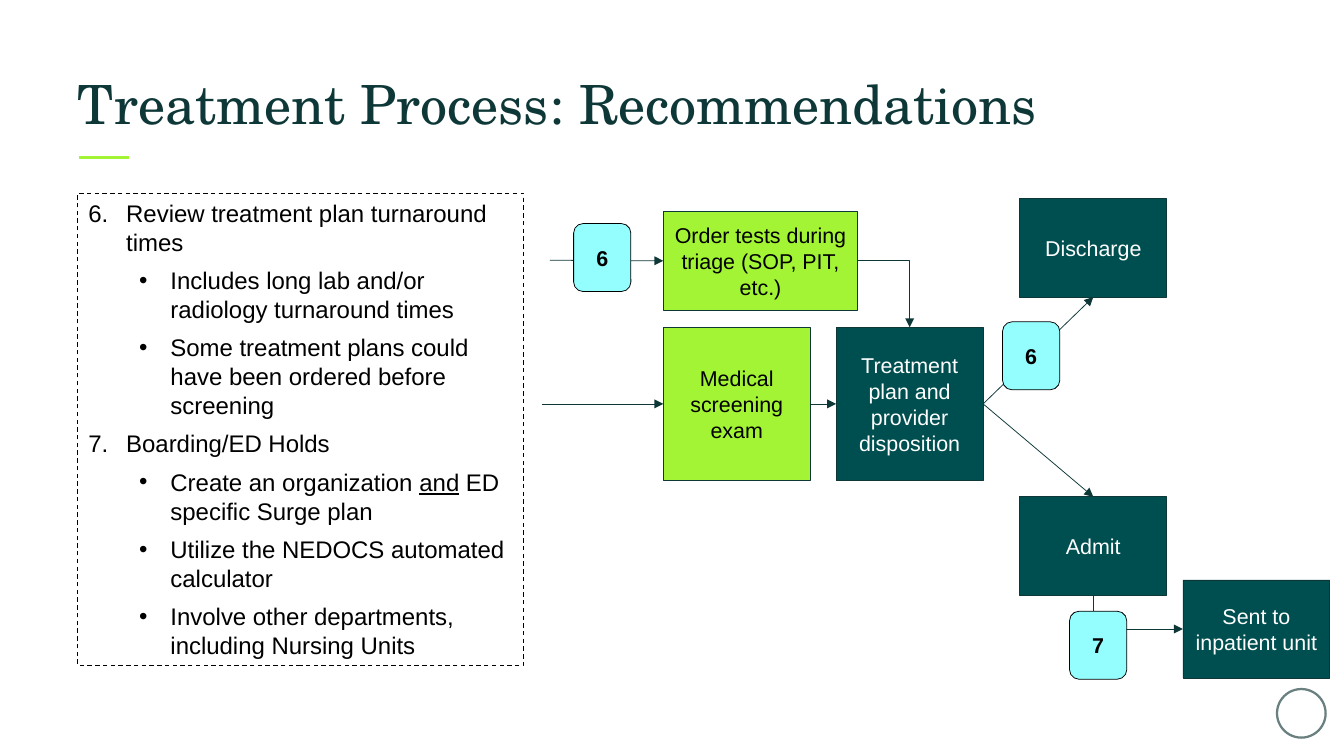
from lxml.etree import SubElement
from pptx import Presentation
from pptx.dml.color import RGBColor
from pptx.enum.dml import MSO_LINE
from pptx.enum.shapes import MSO_CONNECTOR as CONN, MSO_SHAPE as SHAPE
from pptx.enum.text import MSO_ANCHOR as ANCHOR, PP_ALIGN as ALIGN
from pptx.oxml.ns import qn
from pptx.util import Inches, Pt

INK, TEAL, LIME, CYAN = "0E3837", "004F50", "A2F434", "94FEFF"
BLACK, WHITE = "000000", "FFFFFF"
TOP, LEFT, BOTTOM, RIGHT = range(4)  # connection sites of a rectangle


def paint(fill, color):
    fill.solid()
    fill.fore_color.rgb = RGBColor.from_string(color)


def write(p, text, size=14.3, color=BLACK, font="Arial", **style):
    r = p.add_run()
    r.text = text
    r.font.size, r.font.name = Pt(size), font
    paint(r.font.fill, color)
    for name, value in style.items():
        setattr(r.font, name, value)


prs = Presentation()
prs.slide_width, prs.slide_height = Inches(12.44), Inches(7)
s = prs.slides.add_slide(prs.slide_layouts[5])
margin = 0.72

# Title with its accent rule, and a plain ring for the corner mark
title = s.shapes.title
title.left, title.top, title.width, title.height = map(Inches, (margin, 0.5, 11, 0.75))
tf = title.text_frame
tf.margin_left = tf.margin_top = tf.margin_right = tf.margin_bottom = 0
tf.vertical_anchor = ANCHOR.BOTTOM
tf.word_wrap = True
tf.paragraphs[0].alignment = ALIGN.LEFT
write(tf.paragraphs[0], "Treatment Process: Recommendations", 36, INK, "TeX Gyre Schola")

rule = s.shapes.add_connector(CONN.STRAIGHT, *map(Inches, (0.73, 1.46, 1.19, 1.46)))
paint(rule.line.fill, LIME)
rule.line.width = Pt(2)
SubElement(rule._element.spPr, qn("a:effectLst"))

ring = s.shapes.add_shape(SHAPE.OVAL, *map(Inches, (11.82, 6.38, 0.45, 0.45)))
ring.shadow.inherit = False
ring.fill.background()
paint(ring.line.fill, "6A8080")
ring.line.width = Pt(1.5)

# Process boxes and numbered badges: name, text, left, top, width, height, fill
box_w, tall, low = 1.36, 1.42, 0.91
badge = 0.53, 0.63
nodes = [
    ("exam", "Medical screening exam", 6.14, 3.03, box_w, tall, LIME),
    ("plan", "Treatment plan and provider disposition", 7.74, 3.03, box_w, tall, TEAL),
    ("discharge", "Discharge", 9.44, 1.84, box_w, low, TEAL),
    ("admit", "Admit", 9.44, 4.6, box_w, low, TEAL),
    ("inpatient", "Sent to inpatient unit", 10.95, 5.37, box_w, low, TEAL),
    ("tests", "Order tests during triage (SOP, PIT, etc.)", 6.14, 1.96, 1.8, low, LIME),
    ("boarding badge", "7", 9.9, 5.66, *badge, CYAN),
    ("discharge badge", "6", 9.28, 2.98, *badge, CYAN),
    ("tests badge", "6", 5.31, 2.07, *badge, CYAN),
]
shapes = {}
for name, text, x, y, w, h, fill in nodes:
    is_badge = fill == CYAN
    kind = SHAPE.FLOWCHART_ALTERNATE_PROCESS if is_badge else SHAPE.RECTANGLE
    sp = shapes[name] = s.shapes.add_shape(kind, *map(Inches, (x, y, w, h)))
    sp.shadow.inherit = False
    paint(sp.fill, fill)
    paint(sp.line.fill, BLACK if is_badge else INK)
    sp.line.width = Pt(0.5)
    tf = sp.text_frame
    tf.word_wrap = True
    tf.vertical_anchor = ANCHOR.MIDDLE
    p = tf.paragraphs[0]
    p.alignment = ALIGN.CENTER
    write(p, text, color=WHITE if fill == TEAL else BLACK, bold=is_badge)

# Arrows: start is a box and site or a point, end is a box and site
arrows = [
    (("exam", RIGHT), ("plan", LEFT), "tail"),
    (("plan", RIGHT), ("discharge", BOTTOM), "tail"),
    (("plan", RIGHT), ("admit", TOP), "tail"),
    (("inpatient", LEFT), ("admit", BOTTOM), "head"),
    ((5.02, 3.74), ("exam", LEFT), "tail"),
    ((5.09, 2.41), ("tests", LEFT), "tail"),
    (("tests", RIGHT), ("plan", TOP), "tail"),
]
bent = {("inpatient", "admit"), ("tests", "plan")}
first_badge = shapes["boarding badge"]._element
for (start, site), (end, end_site), arrow_end in arrows:
    elbow = (start, end) in bent
    c = s.shapes.add_connector(CONN.ELBOW if elbow else CONN.STRAIGHT, 0, 0, 0, 0)
    if start in shapes:
        c.begin_connect(shapes[start], site)
    else:
        c.begin_x, c.begin_y = Inches(start), Inches(site)
    c.end_connect(shapes[end], end_site)
    paint(c.line.fill, INK)
    c.line.width = Pt(0.5)
    SubElement(c.line._get_or_add_ln(), qn(f"a:{arrow_end}End"), type="triangle")
    SubElement(c._element.spPr, qn("a:effectLst"))
    if elbow:
        c._element.spPr.find(qn("a:prstGeom")).set("prst", "bentConnector2")
    first_badge.addprevious(c._element)  # badges sit on top of the arrows

# Recommendations panel: number (None for a bullet) and text runs
items = [
    (6, ["Review treatment plan turnaround times"]),
    (None, ["Includes long lab and/or radiology turnaround times"]),
    (None, ["Some treatment plans could have been ordered before screening"]),
    (7, ["Boarding/ED Holds"]),
    (None, ["Create an organization ", "and", " ED specific Surge plan"]),
    (None, ["Utilize the NEDOCS automated calculator"]),
    (None, ["Involve other departments, including Nursing Units"]),
]
panel = s.shapes.add_shape(SHAPE.RECTANGLE, *map(Inches, (margin, 1.79, 4.13, 4.37)))
panel.shadow.inherit = False
panel.fill.background()
paint(panel.line.fill, BLACK)
panel.line.width = Pt(0.75)
panel.line.dash_style = MSO_LINE.DASH
tf = panel.text_frame
tf.word_wrap = True
tf.vertical_anchor = ANCHOR.TOP
for i, (number, runs) in enumerate(items):
    p = tf.add_paragraph() if i else tf.paragraphs[0]
    p.alignment = ALIGN.LEFT
    p.space_after = Pt(6.4)
    p.level = 0 if number else 1
    indent, hang = (0.35, 0.35) if number else (0.76, 0.29)
    pPr = p._p.get_or_add_pPr()
    pPr.set("marL", str(Inches(indent)))
    pPr.set("indent", str(-Inches(hang)))
    SubElement(SubElement(pPr, qn("a:buClr")), qn("a:srgbClr"), val=BLACK)
    SubElement(pPr, qn("a:buFont"), typeface="Arial")
    if number:
        SubElement(pPr, qn("a:buAutoNum"), type="arabicPeriod", startAt=str(number))
    else:
        SubElement(pPr, qn("a:buChar"), char="•")
    for text in runs:
        write(p, text, 16, underline=text == "and")

prs.save("out.pptx")
